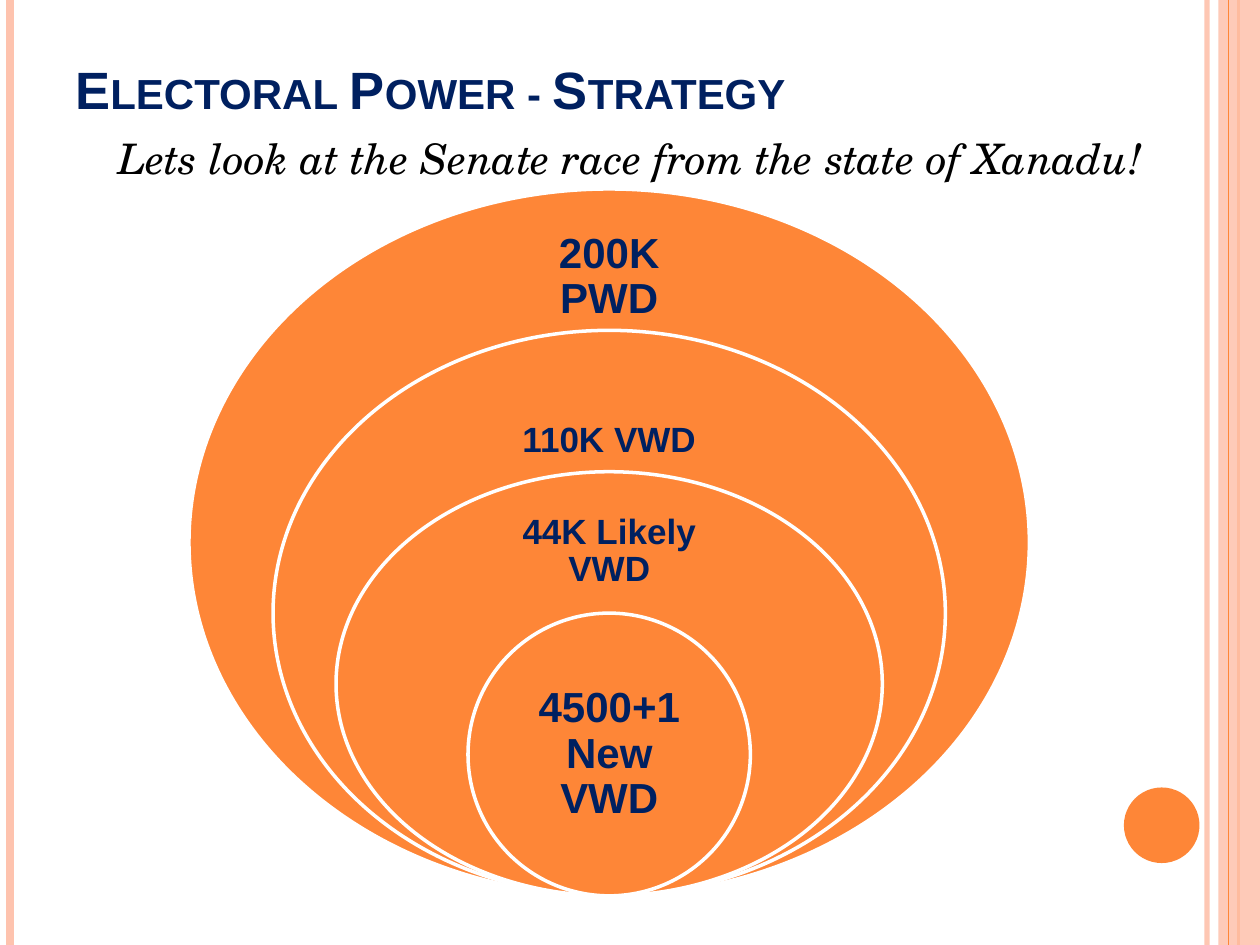
from lxml import etree
from pptx import Presentation
from pptx import util as u
from pptx.dml.color import RGBColor
from pptx.enum import shapes, text
from pptx.oxml.ns import qn

WIDTH, HEIGHT = 10, 7.5
ORANGE, PEACH, NAVY, WHITE, BLACK = "FE8637", "FEC3AE", "002060", "FFFFFF", "000000"


def color(value):
    return RGBColor.from_string(value)


def set_alpha(properties, percent):
    """Make the first solid colour under the properties partly transparent."""
    rgb = next(properties.iter(qn("a:srgbClr")))
    etree.SubElement(rgb, qn("a:alpha")).set("val", str(percent * 1000))


def add_stripe(slide, x, weight, value, alpha=100):
    """Draw a vertical line over the full height of the slide."""
    line = slide.shapes.add_connector(
        shapes.MSO_CONNECTOR.STRAIGHT, u.Inches(x), 0, u.Inches(x), u.Inches(HEIGHT))
    line.line.color.rgb = color(value)
    line.line.width = u.Pt(weight)
    properties = line._element.spPr
    if alpha < 100:
        set_alpha(properties, alpha)
    etree.SubElement(properties, qn("a:effectLst"))


def add_filled(slide, kind, box, fill, outline=None):
    shape = slide.shapes.add_shape(kind, *map(u.Inches, box))
    shape.shadow.inherit = False
    shape.fill.solid()
    shape.fill.fore_color.rgb = color(fill)
    if outline:
        shape.line.color.rgb = color(outline)
        shape.line.width = u.Pt(2)
    else:
        shape.line.fill.background()
    return shape


def add_text(slide, box, words, size, font, value, anchor, align, inset=None):
    """Add a one-paragraph text box and return its paragraph."""
    frame = slide.shapes.add_textbox(*map(u.Inches, box)).text_frame
    frame.word_wrap = True
    frame.vertical_anchor = anchor
    if inset is not None:
        frame.margin_left = frame.margin_right = u.Inches(inset)
        frame.margin_top = frame.margin_bottom = u.Inches(inset)
    paragraph = frame.paragraphs[0]
    paragraph.text = words
    paragraph.alignment = align
    paragraph.font.size = u.Pt(size)
    paragraph.font.name = font
    paragraph.font.color.rgb = color(value)
    return paragraph


def add_frame(slide):
    """Draw the stripes along both edges and the dot at the lower right."""
    add_stripe(slide, 9.58, 3, PEACH, alpha=93)
    add_stripe(slide, 0.08, 4.5, PEACH)
    add_stripe(slide, 9.83, 1.5, ORANGE)
    band = add_filled(slide, shapes.MSO_SHAPE.RECTANGLE, (9.67, 0, WIDTH - 9.67, HEIGHT), PEACH)
    set_alpha(band._element.spPr, 87)
    add_stripe(slide, 9.75, 0.75, ORANGE)
    add_filled(slide, shapes.MSO_SHAPE.OVAL, (8.92, 6.25, 0.6, 0.6), ORANGE)


def add_heading(slide, left, top):
    title = add_text(slide, (left, top, 8.17, 0.7), "Electoral Power - Strategy", 30, "Arial",
                     NAVY, text.MSO_ANCHOR.BOTTOM, text.PP_ALIGN.LEFT)
    title.font.bold = True
    title.font._element.set("cap", "small")
    subtitle = add_text(slide, (left, top + 0.7, 9, 0.55),
                        "Lets look at the Senate race from the state of Xanadu!", 24,
                        "TeX Gyre Schola", BLACK, text.MSO_ANCHOR.TOP, text.PP_ALIGN.CENTER)
    subtitle.font.italic = True
    subtitle.space_before = u.Pt(6)


def add_nested_ovals(slide, left, top, width, height):
    """Stack ovals on a common bottom, each a fifth of the height lower than the last."""
    # words, oval width share, label middle, label width, label height, size, inset
    levels = [
        ("200K PWD", 1, 0.125, 1.86, 0.84, 24, 0.19),
        ("110K VWD", 0.8, 0.357, 1.86, 0.7, 20, 0.16),
        ("44K Likely VWD", 0.65, 0.513, 2.02, 0.76, 20, 0.16),
        ("4500+1 New VWD", 0.336, 0.8, 1.59, 1.12, 24, 0.19),
    ]
    center = left + width / 2
    for index, (words, share, middle, label_width, label_height, size, inset) in enumerate(levels):
        drop = height * index / 5
        oval_width = width * share
        add_filled(slide, shapes.MSO_SHAPE.OVAL,
                   (center - oval_width / 2, top + drop, oval_width, height - drop),
                   ORANGE, WHITE)
        label_box = (center - label_width / 2, top + height * middle - label_height / 2,
                     label_width, label_height)
        label = add_text(slide, label_box, words, size, "Arial", NAVY,
                         text.MSO_ANCHOR.MIDDLE, text.PP_ALIGN.CENTER, inset)
        label.font.bold = True
        label.line_spacing = 0.9


def main():
    presentation = Presentation()
    presentation.slide_width = u.Inches(WIDTH)
    presentation.slide_height = u.Inches(HEIGHT)
    slide = presentation.slides.add_slide(presentation.slide_layouts[6])
    add_frame(slide)
    add_heading(slide, 0.5, 0.3)
    add_nested_ovals(slide, 1.5, 1.5, 6.67, 5.61)
    presentation.save("out.pptx")


if __name__ == "__main__":
    main()
